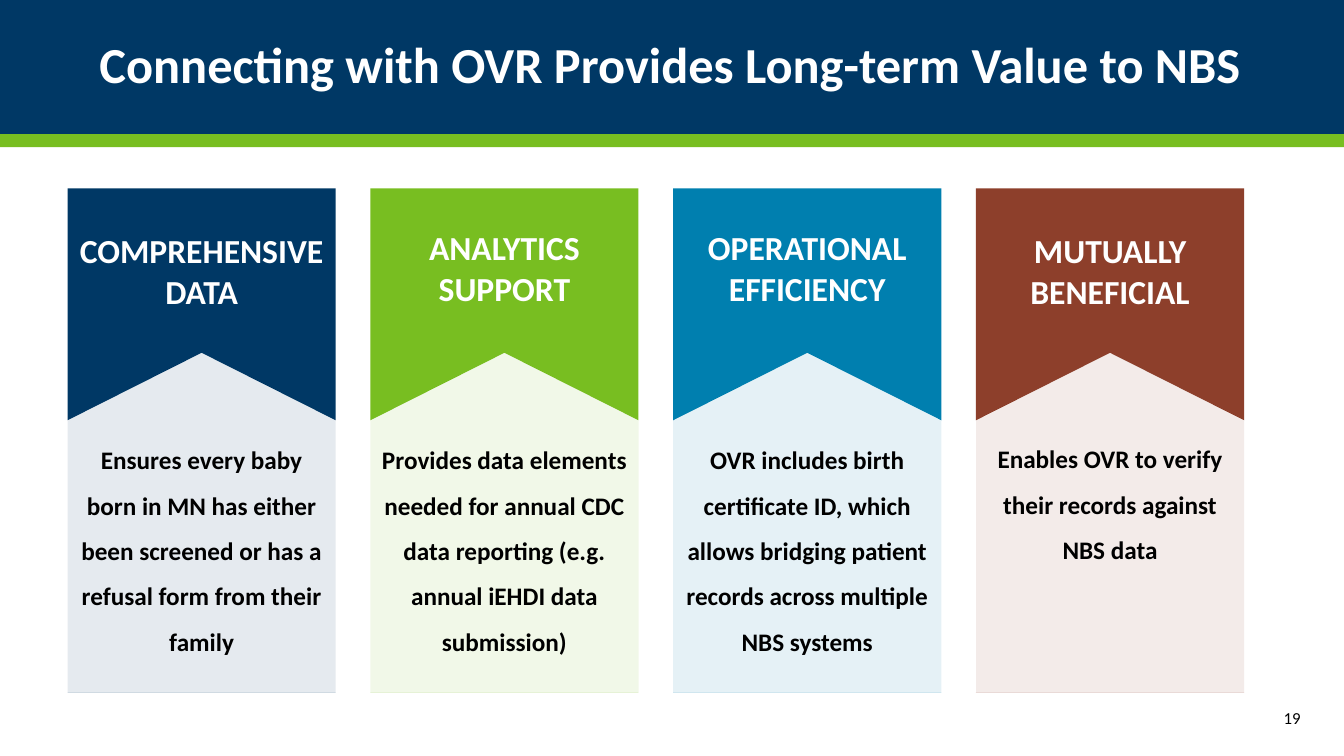
from pptx import Presentation
from pptx.dml.color import RGBColor
from pptx.enum.shapes import MSO_SHAPE
from pptx.enum.text import MSO_ANCHOR, MSO_AUTO_SIZE, PP_ALIGN
from pptx.oxml.ns import qn
from pptx.util import Inches, Pt
from lxml import etree

THEME = {
    "font": "Calibri",
    "navy": "003865", "green": "78BE21", "blue": "007FAF", "rust": "8D3F2B",
    "white": "FFFFFF", "black": "000000",
    "title": 36, "heading": 24, "body": 18, "number": 12,
}


def paint(sp, color, opacity=100):
    sp.shadow.inherit = False
    sp.fill.solid()
    sp.fill.fore_color.rgb = RGBColor.from_string(THEME[color])
    sp.line.fill.background()
    if opacity < 100:
        clr = sp.fill._xPr.find(qn("a:solidFill"))[0]
        etree.SubElement(clr, qn("a:alpha")).set("val", str(opacity * 1000))


def add_text(s, box, text, size, color, align, anchor, bold=True, spacing=1.0):
    tb = s.shapes.add_textbox(*[Inches(v) for v in box])
    tf = tb.text_frame
    tf.word_wrap = True
    tf.auto_size = MSO_AUTO_SIZE.NONE
    tf.vertical_anchor = anchor
    p = tf.paragraphs[0]
    p.alignment = align
    p.line_spacing = spacing
    r = p.add_run()
    r.text = text
    r.font.name = THEME["font"]
    r.font.size = Pt(THEME[size])
    r.font.bold = bold
    r.font.color.rgb = RGBColor.from_string(THEME[color])
    return tf


prs = Presentation()
prs.slide_width = Inches(13.33)
prs.slide_height = Inches(7.5)
s = prs.slides.add_slide(prs.slide_layouts[6])

for top, height, color in [(0, 1.33, "navy"), (1.33, 0.13, "green")]:
    band = s.shapes.add_shape(MSO_SHAPE.RECTANGLE, 0, Inches(top), prs.slide_width, Inches(height))
    paint(band, color)

tf = add_text(s, (0, 0, 12.31, 1.33), "Connecting with OVR Provides Long-term Value to NBS",
              "title", "white", PP_ALIGN.RIGHT, MSO_ANCHOR.MIDDLE, spacing=0.9)
tf.margin_left = tf.margin_right = 0
add_text(s, (11.4, 6.92, 1.6, 0.4), "19", "number", "black",
         PP_ALIGN.RIGHT, MSO_ANCHOR.MIDDLE, bold=False)

columns = [
    ("navy", "COMPREHENSIVE DATA", 2.66, 2.23, 2.33,
     "Ensures every baby born in MN has either been screened or has a refusal form from their family"),
    ("green", "ANALYTICS SUPPORT", 1.77, 2.2, 2.33,
     "Provides data elements needed for annual CDC data reporting (e.g. annual iEHDI data submission)"),
    ("blue", "OPERATIONAL EFFICIENCY", 2.66, 2.2, 2.33,
     "OVR includes birth certificate ID, which allows bridging patient records across multiple NBS systems"),
    ("rust", "MUTUALLY BENEFICIAL", 2.21, 2.23, 1.42,
     "Enables OVR to verify their records against NBS data"),
]
FIRST, LAST, WIDTH = 0.67, 9.68, 2.66
TOP, PEAK, SHOULDER, BOTTOM = 1.87, 3.5, 4.17, 6.87
pitch = (LAST - FIRST) / (len(columns) - 1)

for i, (color, heading, heading_width, heading_top, body_height, body) in enumerate(columns):
    left = FIRST + i * pitch
    right, center = left + WIDTH, left + WIDTH / 2

    fb = s.shapes.build_freeform(Inches(left), Inches(BOTTOM))
    fb.add_line_segments([(Inches(right), Inches(BOTTOM))], close=True)
    fb.move_to(Inches(left), Inches(TOP))
    fb.add_line_segments([(Inches(x), Inches(y)) for x, y in [
        (right, TOP), (right, SHOULDER), (center, PEAK), (left, SHOULDER)]], close=True)
    paint(fb.convert_to_shape(), color)

    panel = s.shapes.add_shape(MSO_SHAPE.FLOWCHART_OFFPAGE_CONNECTOR, Inches(left), Inches(PEAK),
                               Inches(WIDTH), Inches(BOTTOM - PEAK))
    panel.rotation = 180
    paint(panel, color, opacity=10)

    add_text(s, (center - heading_width / 2, heading_top, heading_width, 0.91), heading,
             "heading", "white", PP_ALIGN.CENTER, MSO_ANCHOR.MIDDLE)
    add_text(s, (left, 4.23, WIDTH, body_height), body,
             "body", "black", PP_ALIGN.CENTER, MSO_ANCHOR.BOTTOM, spacing=1.5)

prs.save("out.pptx")
